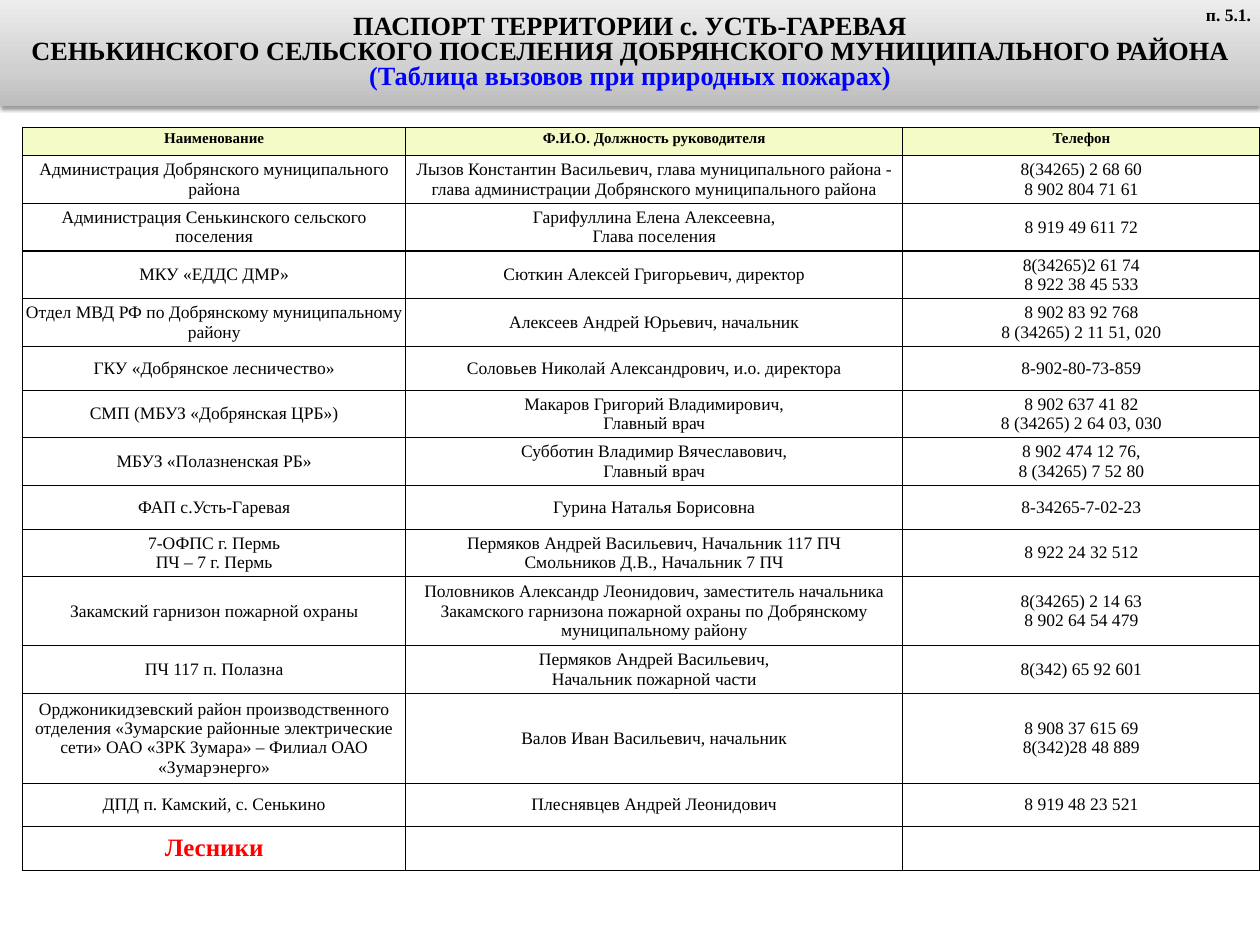
from dataclasses import dataclass

from lxml import etree
from pptx import Presentation
from pptx.dml.color import RGBColor
from pptx.enum.text import MSO_ANCHOR, MSO_AUTO_SIZE, PP_ALIGN
from pptx.oxml import parse_xml
from pptx.oxml.ns import nsdecls, qn
from pptx.util import Cm, Pt

CENTER, RIGHT = PP_ALIGN.CENTER, PP_ALIGN.RIGHT
TOP, MIDDLE = MSO_ANCHOR.TOP, MSO_ANCHOR.MIDDLE
NO_AUTOFIT = MSO_AUTO_SIZE.NONE
TITLE_ONLY = 5


@dataclass(frozen=True)
class Theme:
    font: str = "Times New Roman"
    black: str = "000000"
    blue: str = "0000FF"
    red: str = "FF0000"
    header_fill: str = "F4FBC7"
    band_stops: tuple = ((0, "BCBCBC"), (35, "D0D0D0"), (100, "EDEDED"))
    title_size: float = 21
    header_size: float = 12
    body_size: float = 14
    accent_size: float = 20


THEME = Theme()

# Content
TITLE = [
    ("ПАСПОРТ ТЕРРИТОРИИ с. УСТЬ-ГАРЕВАЯ", THEME.black),
    ("СЕНЬКИНСКОГО СЕЛЬСКОГО ПОСЕЛЕНИЯ ДОБРЯНСКОГО МУНИЦИПАЛЬНОГО РАЙОНА", THEME.black),
    ("(Таблица вызовов при природных пожарах)", THEME.blue),
]
SECTION = "п. 5.1."
HEADERS = ("Наименование", "Ф.И.О. Должность руководителя", "Телефон")
# Each line of a cell is a paragraph
CONTACTS = [
    ("Администрация Добрянского муниципального района",
     "Лызов Константин Васильевич, глава муниципального района - "
     "глава администрации Добрянского муниципального района",
     "8(34265) 2 68 60\n8 902 804 71 61"),
    ("Администрация Сенькинского сельского поселения",
     "Гарифуллина Елена Алексеевна,\nГлава поселения", "8 919 49 611 72"),
    ("МКУ «ЕДДС ДМР»", "Сюткин Алексей Григорьевич, директор",
     "8(34265)2 61 74\n8 922 38 45 533"),
    ("Отдел МВД РФ по Добрянскому муниципальному району",
     "Алексеев Андрей Юрьевич, начальник",
     "8 902 83 92 768\n8 (34265) 2 11 51, 020"),
    ("ГКУ «Добрянское лесничество»",
     "Соловьев Николай Александрович, и.о. директора", "8-902-80-73-859"),
    ("СМП (МБУЗ «Добрянская ЦРБ»)",
     "Макаров Григорий Владимирович,\nГлавный врач",
     "8 902 637 41 82\n8 (34265) 2 64 03, 030"),
    ("МБУЗ «Полазненская РБ»",
     "Субботин Владимир Вячеславович,\nГлавный врач",
     "8 902 474 12 76,\n8 (34265) 7 52 80"),
    ("ФАП с.Усть-Гаревая", "Гурина Наталья Борисовна", "8-34265-7-02-23"),
    ("7-ОФПС г. Пермь\nПЧ – 7 г. Пермь",
     "Пермяков Андрей Васильевич, Начальник 117 ПЧ\n"
     "Смольников Д.В., Начальник 7 ПЧ", "8 922 24 32 512"),
    ("Закамский гарнизон пожарной охраны",
     "Половников Александр Леонидович, заместитель начальника Закамского "
     "гарнизона пожарной охраны по Добрянскому муниципальному району",
     "8(34265) 2 14 63\n8 902 64 54 479"),
    ("ПЧ 117 п. Полазна",
     "Пермяков Андрей Васильевич,\nНачальник пожарной части", "8(342) 65 92 601"),
    ("Орджоникидзевский район производственного отделения «Зумарские районные "
     "электрические сети» ОАО «ЗРК Зумара» – Филиал ОАО «Зумарэнерго»",
     "Валов Иван Васильевич, начальник", "8 908 37 615 69\n8(342)28 48 889"),
    ("ДПД п. Камский, с. Сенькино", "Плеснявцев Андрей Леонидович",
     "8 919 48 23 521"),
]
LAST_ROW = ("Лесники", "", "")

# Geometry in centimetres
PAGE_WIDTH, PAGE_HEIGHT = 35.56, 26.67
BAND_HEIGHT = 3.0
TABLE_LEFT, TABLE_TOP = 0.64, 3.6
COLUMN_WIDTHS = (10.81, 14.03, 10.08)
HEADER_HEIGHT, ROW_HEIGHT = 0.79, 1.23
# Heights that follow from the number of text lines
LINE_HEIGHTS = {2: 1.33, 3: 1.92, 4: 2.51}
LINE_COUNTS = (2, 2, 2, 2, 1, 2, 2, 1, 2, 3, 2, 4, 1, 1)
CELL_MARGIN = 0.08


def style(para, size, color=THEME.black, bold=False, align=CENTER):
    para.alignment = align
    para.font.name = THEME.font
    para.font.size = Pt(size)
    para.font.bold = bold
    para.font.color.rgb = RGBColor.from_string(color)


def write(frame, lines):
    """Put each line in its own paragraph and return the paragraphs."""
    frame.text = "\n".join(lines)
    return frame.paragraphs


def add_title_band(page):
    band = page.shapes.title
    band.left, band.top = Cm(0), Cm(0)
    band.width, band.height = Cm(PAGE_WIDTH), Cm(BAND_HEIGHT)
    stops = "".join(
        f'<a:gs pos="{place * 1000}"><a:srgbClr val="{color}"/></a:gs>'
        for place, color in THEME.band_stops)
    properties = band.element.spPr
    properties.append(parse_xml(
        f'<a:prstGeom {nsdecls("a")} prst="rect"><a:avLst/></a:prstGeom>'))
    properties.append(parse_xml(
        f'<a:gradFill {nsdecls("a")}><a:gsLst>{stops}</a:gsLst>'
        '<a:lin ang="16200000"/></a:gradFill>'))
    properties.append(parse_xml(
        f'<a:effectLst {nsdecls("a")}><a:outerShdw blurRad="40000" dist="20000" '
        'dir="5400000" rotWithShape="0"><a:srgbClr val="000000">'
        '<a:alpha val="38000"/></a:srgbClr></a:outerShdw></a:effectLst>'))
    frame = band.text_frame
    frame.word_wrap, frame.auto_size = True, NO_AUTOFIT
    frame.vertical_anchor = MIDDLE
    paras = write(frame, [text for text, _ in TITLE])
    for para, (_, color) in zip(paras, TITLE):
        style(para, THEME.title_size, color, bold=True)
        para.line_spacing = 0.8


def add_section_number(page):
    width = 2.39
    box = page.shapes.add_textbox(Cm(PAGE_WIDTH - width), Cm(0), Cm(width), Cm(0.84))
    box.text_frame.word_wrap = True
    para = write(box.text_frame, [SECTION])[0]
    style(para, THEME.body_size, bold=True, align=RIGHT)


def add_borders(cell):
    properties = cell._tc.get_or_add_tcPr()
    for index, side in enumerate(("lnL", "lnR", "lnT", "lnB")):
        line = etree.Element(qn(f"a:{side}"), w=str(Pt(1)))
        fill = etree.SubElement(line, qn("a:solidFill"))
        etree.SubElement(fill, qn("a:srgbClr"), val=THEME.black)
        properties.insert(index, line)


def add_contact_table(page):
    rows = [HEADERS, *CONTACTS, LAST_ROW]
    heights = [HEADER_HEIGHT] + [LINE_HEIGHTS.get(n, ROW_HEIGHT) for n in LINE_COUNTS]
    table = page.shapes.add_table(
        len(rows), len(HEADERS), Cm(TABLE_LEFT), Cm(TABLE_TOP),
        Cm(sum(COLUMN_WIDTHS)), Cm(sum(heights))).table
    table.first_row = table.horz_banding = False
    for column, width in zip(table.columns, COLUMN_WIDTHS):
        column.width = Cm(width)
    for row, height, texts in zip(table.rows, heights, rows):
        row.height = Cm(height)
        is_header, is_last = texts is HEADERS, texts is LAST_ROW
        for cell, text in zip(row.cells, texts):
            cell.margin_left = cell.margin_right = Cm(CELL_MARGIN)
            cell.margin_top = cell.margin_bottom = Cm(CELL_MARGIN)
            cell.vertical_anchor = TOP if is_header else MIDDLE
            if is_header:
                cell.fill.solid()
                cell.fill.fore_color.rgb = RGBColor.from_string(THEME.header_fill)
            else:
                cell.fill.background()
            add_borders(cell)
            for para in write(cell.text_frame, text.split("\n")):
                if is_header:
                    style(para, THEME.header_size, bold=True)
                elif is_last:
                    style(para, THEME.accent_size, THEME.red, bold=True)
                else:
                    style(para, THEME.body_size)


def main():
    deck = Presentation()
    deck.slide_width, deck.slide_height = Cm(PAGE_WIDTH), Cm(PAGE_HEIGHT)
    page = deck.slides.add_slide(deck.slide_layouts[TITLE_ONLY])
    add_title_band(page)
    add_section_number(page)
    add_contact_table(page)
    deck.save("out.pptx")


if __name__ == "__main__":
    main()
